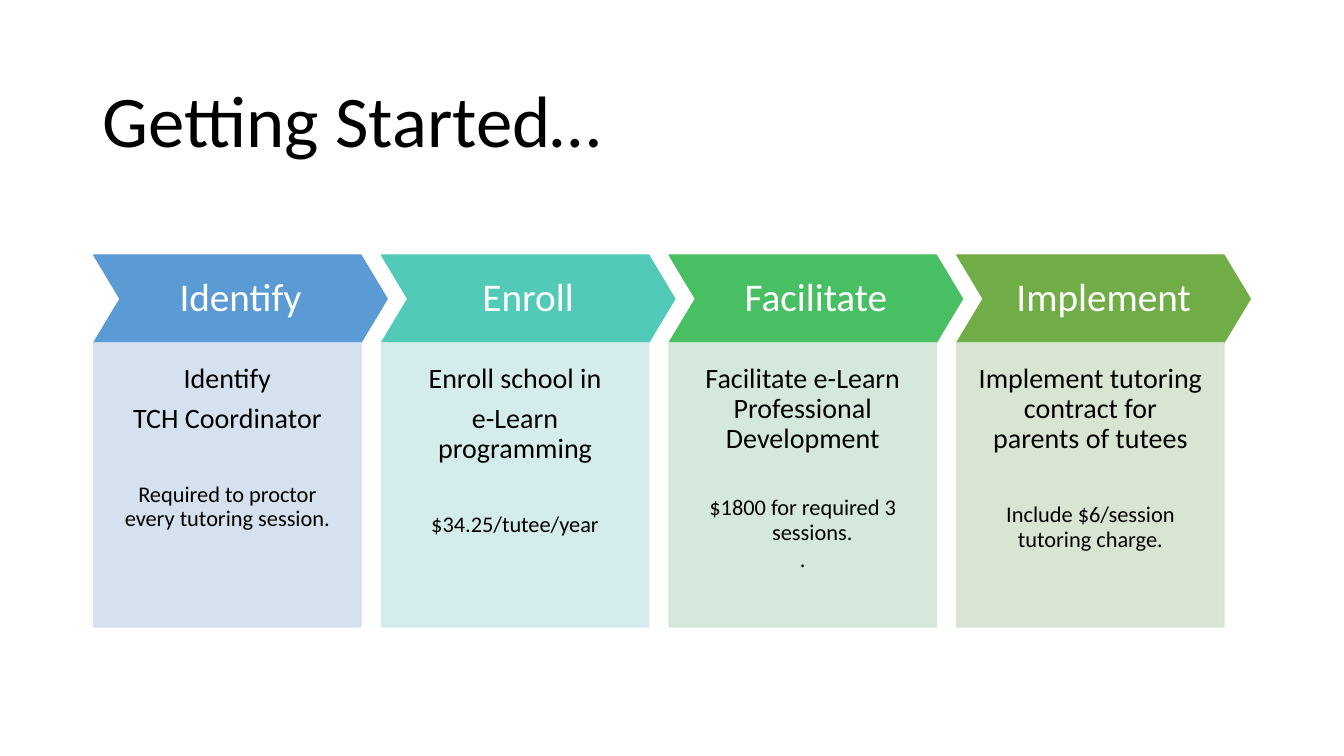
from lxml import etree
from pptx import Presentation
from pptx import util as u
from pptx.dml.color import RGBColor
from pptx.enum import shapes, text
from pptx.oxml import ns

COLORS = {
    "black": "000000", "white": "FFFFFF",
    "blue": "5B9BD5", "pale blue": "D2DEEF",
    "teal": "52CAB8", "pale teal": "D0ECEA",
    "green": "49BF64", "pale green": "D0E7D8",
    "olive": "70AD47", "pale olive": "D5E3CF",
}
LEFT, PITCH = 0.93, (9.49 - 0.93) / 3
HEADER_TOP, HEADER_WIDTH, HEADER_HEIGHT = 2.53, 2.91, 0.87
BODY_TOP, BODY_WIDTH, BODY_HEIGHT = 3.4, 2.65, 2.82

STEPS = [
    ("Identify", "blue", ["Identify", "TCH Coordinator"],
     ["Required to proctor every tutoring session."], 28, 0),
    ("Enroll", "teal", ["Enroll school in", "e-Learn programming"],
     ["$34.25/tutee/year"], 28, 0),
    ("Facilitate", "green", ["Facilitate e-Learn Professional Development"],
     ["$1800 for required 3 sessions.", "."], 23, 0.19),
    ("Implement", "olive", ["Implement tutoring contract for parents of tutees"],
     ["Include $6/session tutoring charge."], 28, 0),
]


class StepSlide:
    """Draws the title and step columns of one slide in a shared style."""

    def __init__(self, presentation, font="Calibri"):
        self.slide = presentation.slides.add_slide(presentation.slide_layouts[6])
        self.font = font

    def frame(self, shape, anchor, insets):
        frame = shape.text_frame
        frame.word_wrap = True
        frame.vertical_anchor = anchor
        (frame.margin_left, frame.margin_top,
         frame.margin_right, frame.margin_bottom) = map(u.Inches, insets)
        return frame

    def add_line(self, frame, words, size, color="black", align=text.PP_ALIGN.CENTER,
                 before=0, after=0, hanging=0):
        paragraph = frame.paragraphs[0]
        if paragraph.text:
            paragraph = frame.add_paragraph()
        paragraph.text = words
        paragraph.alignment = align
        paragraph.line_spacing = 0.9
        paragraph.space_before, paragraph.space_after = u.Pt(before), u.Pt(after)
        paragraph.font.name = self.font
        paragraph.font.size = u.Pt(size)
        paragraph.font.color.rgb = RGBColor.from_string(COLORS[color])
        if hanging:
            properties = paragraph._p.get_or_add_pPr()
            properties.set("marL", str(u.Inches(hanging)))
            properties.set("indent", str(-u.Inches(hanging)))

    def panel(self, kind, left, top, width, height, color, opacity=100):
        shape = self.slide.shapes.add_shape(
            kind, *map(u.Inches, (left, top, width, height)))
        shape.shadow.inherit = False
        shape.fill.solid()
        shape.line.width = u.Pt(1)
        for paint in (shape.fill.fore_color, shape.line.color):
            paint.rgb = RGBColor.from_string(COLORS[color])
        if opacity < 100:
            for tint in shape._element.spPr.iter(ns.qn("a:srgbClr")):
                etree.SubElement(tint, ns.qn("a:alpha"), val=str(opacity * 1000))
        return shape

    def title(self, words):
        box = self.slide.shapes.add_textbox(*map(u.Inches, (0.92, 0.61, 11.5, 1.24)))
        frame = self.frame(box, text.MSO_ANCHOR.MIDDLE, (0.1, 0.05, 0.1, 0.05))
        self.add_line(frame, words, 52, align=text.PP_ALIGN.LEFT)

    def header(self, left, words, color):
        chevron = self.panel(shapes.MSO_SHAPE.CHEVRON, left, HEADER_TOP,
                             HEADER_WIDTH, HEADER_HEIGHT, color)
        chevron.adjustments[0] = 0.3
        frame = self.frame(chevron, text.MSO_ANCHOR.MIDDLE, [0.11] * 4)
        self.add_line(frame, words, 28, "white")

    def body(self, left, color, tasks, details, gap, hanging):
        box = self.panel(shapes.MSO_SHAPE.RECTANGLE, left, BODY_TOP,
                         BODY_WIDTH, BODY_HEIGHT, color, opacity=90)
        frame = self.frame(box, text.MSO_ANCHOR.TOP, (0.21, 0.21, 0.21, 0.42))
        for task in tasks:
            self.add_line(frame, task, 20, after=7)
        for number, detail in enumerate(details):
            self.add_line(frame, detail, 16, before=0 if number else gap,
                          after=2.4, hanging=hanging)


def main():
    presentation = Presentation()
    presentation.slide_width = u.Inches(13.33)
    presentation.slide_height = u.Inches(7.5)
    page = StepSlide(presentation)
    page.title("Getting Started…")
    for index, (name, color, tasks, details, gap, hanging) in enumerate(STEPS):
        left = LEFT + index * PITCH
        page.header(left, name, color)
        page.body(left, f"pale {color}", tasks, details, gap, hanging)
    presentation.save("out.pptx")


if __name__ == "__main__":
    main()
